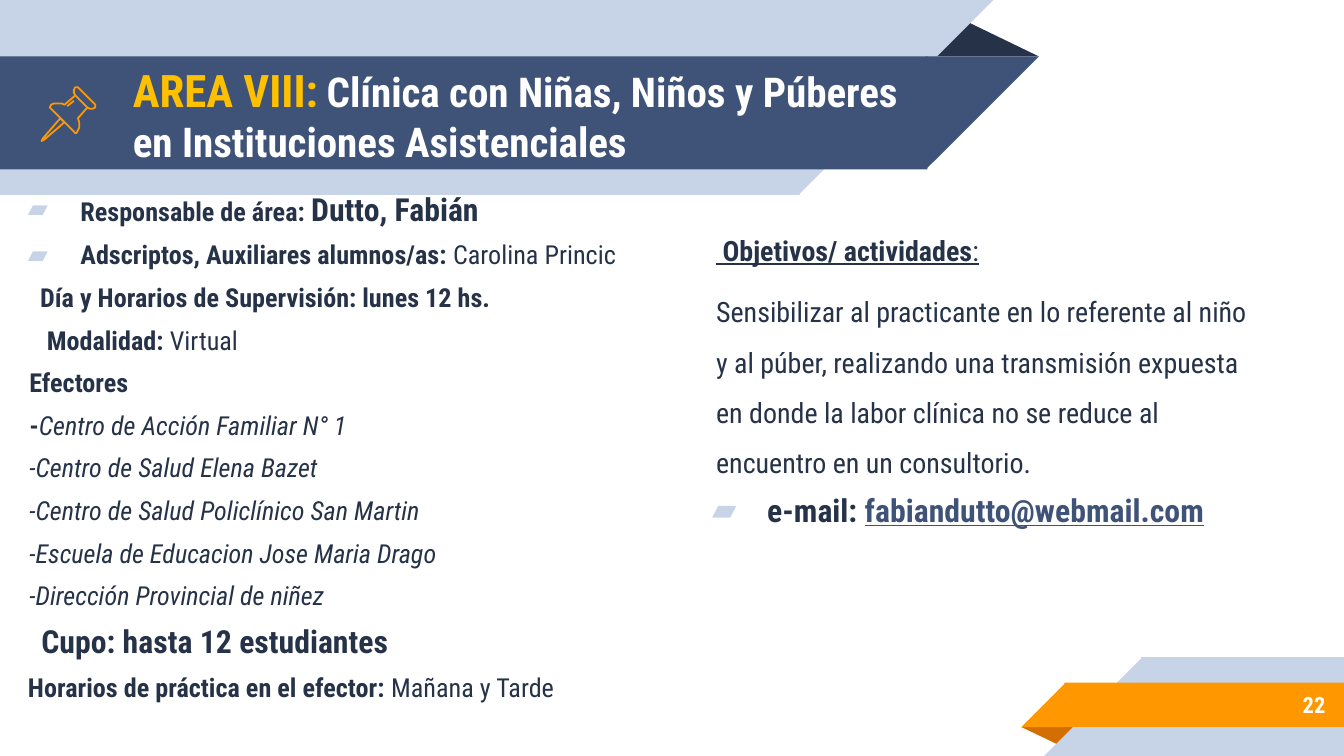
from dataclasses import dataclass
from typing import Optional

from lxml import etree
from pptx import Presentation
from pptx.dml.color import RGBColor
from pptx.enum.shapes import MSO_CONNECTOR, MSO_SHAPE
from pptx.enum.text import MSO_ANCHOR, PP_ALIGN
from pptx.oxml.ns import qn
from pptx.util import Inches, Pt

RECT, CORNER = MSO_SHAPE.RECTANGLE, MSO_SHAPE.RIGHT_TRIANGLE
FOLD = MSO_SHAPE.ISOSCELES_TRIANGLE
STRAIGHT = MSO_CONNECTOR.STRAIGHT
TOP, MIDDLE = MSO_ANCHOR.TOP, MSO_ANCHOR.MIDDLE
LEFT, RIGHT = PP_ALIGN.LEFT, PP_ALIGN.RIGHT

WIDTH = 10
HEIGHT = WIDTH * 9 / 16
FONT = "Roboto Condensed"
NAVY, BLUE, PALE = "263248", "3F5378", "C7D3E6"
ORANGE, RUST, GOLD, WHITE = "FF9800", "D26F00", "FFC000", "FFFFFF"


@dataclass
class Part:
    kind: int
    box: tuple
    color: str
    rotation: int = 0
    flip: bool = False


@dataclass
class Run:
    text: str
    size: float = 14
    bold: bool = False
    italic: bool = False
    underline: bool = False
    color: str = NAVY


@dataclass
class Para:
    runs: list
    margin: float = 0.12
    hanging: float = 0
    bullet: bool = False
    spacing: Optional[float] = None
    before: float = 6


def rgb(color: str) -> RGBColor:
    return RGBColor.from_string(color)


def draw_part(shapes, part: Part) -> None:
    s = shapes.add_shape(part.kind, *map(Inches, part.box))
    s.shadow.inherit = False
    s.fill.solid()
    s.fill.fore_color.rgb = rgb(part.color)
    s.line.fill.background()
    s.rotation = part.rotation
    if part.flip:
        s._element.spPr.find(qn("a:xfrm")).set("flipH", "1")
    if part.kind == FOLD:
        s.adjustments[0] = 0.32


def add_bullet(p_pr) -> None:
    color = etree.SubElement(p_pr, qn("a:buClr"))
    etree.SubElement(color, qn("a:srgbClr"), val=PALE)
    etree.SubElement(p_pr, qn("a:buFont"), typeface=FONT)
    etree.SubElement(p_pr, qn("a:buChar"), char="▰")


def add_text(shapes, box: tuple, paras: list, *, anchor=TOP, align=LEFT) -> None:
    tf = shapes.add_textbox(*map(Inches, box)).text_frame
    tf.word_wrap = True
    tf.vertical_anchor = anchor
    tf.margin_left = tf.margin_right = tf.margin_top = tf.margin_bottom = Inches(0.1)
    for i, para in enumerate(paras):
        p = tf.add_paragraph() if i else tf.paragraphs[0]
        p.alignment = align
        p.space_before = Pt(para.before)
        if para.spacing:
            p.line_spacing = para.spacing
        p_pr = p._p.get_or_add_pPr()
        p_pr.set("marL", str(Inches(para.margin)))
        p_pr.set("indent", str(Inches(para.hanging)))
        if para.bullet:
            add_bullet(p_pr)
        for run in para.runs:
            r = p.add_run()
            r.text = run.text
            r.font.name, r.font.size = FONT, Pt(run.size)
            r.font.bold, r.font.italic = run.bold, run.italic
            r.font.underline = run.underline
            r.font.color.rgb = rgb(run.color)


def draw_outline(shapes, points: list, close: bool) -> None:
    """Points are in hundredths of an inch."""
    builder = shapes.build_freeform(*points[0], scale=Inches(0.01))
    builder.add_line_segments(points[1:], close=close)
    s = builder.convert_to_shape()
    s.shadow.inherit = False
    s.fill.background()
    s.line.color.rgb = rgb(ORANGE)
    s.line.width = Pt(0.96)


def draw_line(shapes, start: tuple, end: tuple) -> None:
    s = shapes.add_connector(STRAIGHT, *map(Inches, start + end))
    s.line.color.rgb = rgb(ORANGE)
    s.line.width = Pt(0.96)
    etree.SubElement(s._element.spPr, qn("a:effectLst"))


HEADER = [
    Part(FOLD, (6.88, 0.14, 0.85, 0.28), NAVY),
    Part(RECT, (0, 0, 5.95, 1.45), PALE, 180, True),
    Part(CORNER, (5.94, 0, 1.45, 1.45), PALE, 180, True),
    Part(RECT, (0, 0.42, 6.9, 0.84), BLUE, 180, True),
    Part(CORNER, (6.89, 0.42, 0.84, 0.84), BLUE, 180, True),
]
FOOTER = [
    Part(FOLD, (7.6, 5.41, 0.43, 0.14), RUST, 180),
    Part(RECT, (8.49, 4.89, WIDTH - 8.49, HEIGHT - 4.89), PALE, flip=True),
    Part(CORNER, (7.77, 4.89, 0.73, HEIGHT - 4.89), PALE, flip=True),
    Part(RECT, (7.92, 5.08, WIDTH - 7.92, 0.33), ORANGE, flip=True),
    Part(CORNER, (7.6, 5.08, 0.33, 0.33), ORANGE, flip=True),
]

TITLE = [Para([
    Run("AREA VIII:", 24, True, color=GOLD),
    Run(" ", 20, True),
    Run("Clínica con Niñas, Niños y Púberes en Instituciones Asistenciales",
        22, True, color=WHITE),
], margin=0, before=0)]

CENTRES = ["Centro de Salud Elena Bazet", "Centro de Salud Policlínico San Martin",
           "Escuela de Educacion Jose Maria Drago", "Dirección Provincial de niñez"]
DETAILS = [
    Para([Run("Responsable de área: ", bold=True), Run("Dutto, Fabián", 17, True)],
         0.5, -0.39, True),
    Para([Run("Adscriptos, Auxiliares alumnos/as: ", bold=True),
          Run("Carolina Princic")], 0.5, -0.39, True),
    Para([Run("Día y Horarios de Supervisión: lunes 12 hs.", bold=True)], 0.2),
    Para([Run("Modalidad:", bold=True), Run(" Virtual")], 0.25),
    Para([Run("Efectores", bold=True)]),
    Para([Run("-", bold=True), Run("Centro de Acción Familiar N° 1", italic=True)]),
    *[Para([Run(f"-{centre}", italic=True)]) for centre in CENTRES],
    Para([Run("Cupo: hasta 12 estudiantes", 17, True)], 0.21),
    Para([Run("Horarios de práctica en el efector: ", bold=True),
          Run("Mañana y Tarde")], 0.11),
]
GOALS = [
    Para([Run(" Objetivos/ actividades", 15, True, underline=True),
          Run(":", 15, underline=True)], spacing=1.5),
    Para([Run("Sensibilizar al practicante en lo referente al niño y al púber, "
              "realizando una transmisión expuesta en donde la labor clínica no se "
              "reduce al encuentro en un consultorio.", 15)], spacing=1.5),
    Para([Run("e-mail: ", 17, True),
          Run("fabiandutto@webmail.com", 17, True, underline=True, color=BLUE)],
         0.5, -0.41, True),
]

PIN_NEEDLE = [(45, 88), (32, 103), (31, 105), (33, 104), (48, 91)]
PIN_HEAD = [(56, 71), (65, 80), (67, 81), (69, 81), (71, 80), (71, 78),
            (58, 65), (56, 65), (55, 67), (55, 69)]
PIN_BODY = [(56, 71), (48, 78), (46, 77), (43, 77), (40, 77), (38, 78), (37, 80),
            (38, 81), (55, 98), (56, 99), (57, 99), (58, 97), (59, 95), (59, 91),
            (58, 88), (65, 80)]


def main() -> None:
    prs = Presentation()
    prs.slide_width, prs.slide_height = Inches(WIDTH), Inches(HEIGHT)
    shapes = prs.slides.add_slide(prs.slide_layouts[6]).shapes

    # Ribbons
    for part in HEADER + FOOTER:
        draw_part(shapes, part)

    # Texts
    add_text(shapes, (0, 1.31, 5.23, HEIGHT - 1.31), DETAILS)
    add_text(shapes, (5.11, 1.51, 4.35, 3.56), GOALS)
    number = Para([Run("22", 12, True, color=WHITE)], margin=0, before=0)
    add_text(shapes, (8.33, 5.07, 1.63, 0.35), [number], anchor=MIDDLE, align=RIGHT)
    add_text(shapes, (0.89, 0.43, 6.18, 0.84), TITLE, anchor=MIDDLE)

    # Push pin
    draw_outline(shapes, PIN_NEEDLE, True)
    draw_outline(shapes, PIN_HEAD, True)
    draw_outline(shapes, PIN_BODY, False)
    draw_line(shapes, (0.5, 0.79), (0.55, 0.75))

    prs.save("out.pptx")


if __name__ == "__main__":
    main()
